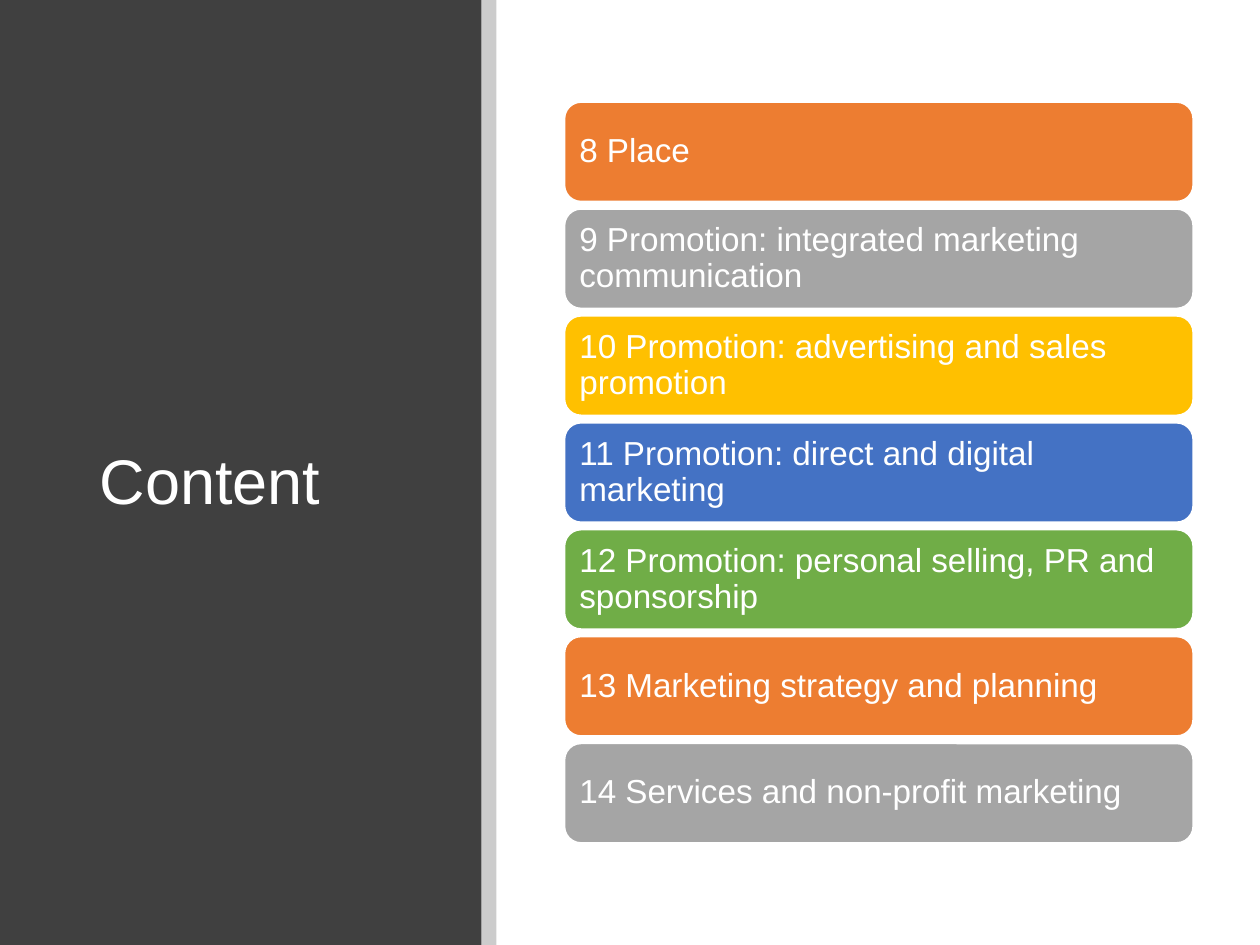
from dataclasses import dataclass

from lxml import etree
from pptx import Presentation
from pptx.dml.color import RGBColor
from pptx.enum.shapes import MSO_SHAPE
from pptx.enum.text import MSO_ANCHOR, PP_ALIGN
from pptx.oxml.ns import qn
from pptx.util import Inches, Pt

RECTANGLE, ROUNDED = MSO_SHAPE.RECTANGLE, MSO_SHAPE.ROUNDED_RECTANGLE
MIDDLE, LEFT = MSO_ANCHOR.MIDDLE, PP_ALIGN.LEFT

SLIDE_WIDTH, SLIDE_HEIGHT = 10, 7.5


@dataclass(frozen=True)
class Theme:
    font: str = "Arial"
    title_size: float = 36
    chapter_size: float = 19
    line_spacing: float = 0.9
    light: str = "FFFFFF"
    panel: str = "404040"
    strip: str = "000000"
    strip_opacity: float = 0.2
    orange: str = "ED7D31"
    gray: str = "A5A5A5"
    gold: str = "FFC000"
    blue: str = "4472C4"
    green: str = "70AD47"


@dataclass(frozen=True)
class Box:
    left: float
    top: float
    width: float
    height: float

    def emu(self) -> tuple:
        return tuple(Inches(v) for v in (self.left, self.top, self.width, self.height))


@dataclass(frozen=True)
class Chapter:
    number: int
    name: str
    color: str


THEME = Theme()
PANEL = Box(0, 0, 3.82, SLIDE_HEIGHT)
STRIP = Box(PANEL.width, 0, 0.12, SLIDE_HEIGHT)
TITLE = Box(0.69, 0.89, 2.74, 5.91)
FIRST_BAR = Box(4.48, 0.81, 4.99, 0.79)
LAST_BAR_TOP = 5.9
BAR_INSET = 0.08

CHAPTERS = [
    Chapter(8, "Place", THEME.orange),
    Chapter(9, "Promotion: integrated marketing communication", THEME.gray),
    Chapter(10, "Promotion: advertising and sales promotion", THEME.gold),
    Chapter(11, "Promotion: direct and digital marketing", THEME.blue),
    Chapter(12, "Promotion: personal selling, PR and sponsorship", THEME.green),
    Chapter(13, "Marketing strategy and planning", THEME.orange),
    Chapter(14, "Services and non-proﬁt marketing", THEME.gray),
]


def add_filled(shapes, kind, box: Box, color: str):
    shape = shapes.add_shape(kind, *box.emu())
    shape.shadow.inherit = False
    shape.fill.solid()
    shape.fill.fore_color.rgb = RGBColor.from_string(color)
    shape.line.fill.background()
    return shape


def set_opacity(shape, share: float) -> None:
    color = shape.element.spPr.find(qn("a:solidFill"))[0]
    etree.SubElement(color, qn("a:alpha")).set("val", str(round(share * 100000)))


def write(frame, text: str, size: float) -> None:
    frame.word_wrap = True
    frame.vertical_anchor = MIDDLE
    paragraph = frame.paragraphs[0]
    paragraph.alignment = LEFT
    paragraph.line_spacing = THEME.line_spacing
    run = paragraph.add_run()
    run.text = text
    run.font.name = THEME.font
    run.font.size = Pt(size)
    run.font.color.rgb = RGBColor.from_string(THEME.light)


def place_title(slide, text: str) -> None:
    """Fill the title placeholder and bring it in front of the panel."""
    title = slide.shapes.title
    title.left, title.top, title.width, title.height = TITLE.emu()
    write(title.text_frame, text, THEME.title_size)
    title.element.getparent().append(title.element)


def add_chapter(shapes, chapter: Chapter, box: Box) -> None:
    bar = add_filled(shapes, ROUNDED, box, chapter.color)
    bar.line.color.rgb = RGBColor.from_string(THEME.light)
    bar.line.width = Pt(1)
    frame = bar.text_frame
    frame.margin_left = frame.margin_right = Inches(BAR_INSET)
    frame.margin_top = frame.margin_bottom = Inches(BAR_INSET)
    write(frame, f"{chapter.number} {chapter.name}", THEME.chapter_size)


def main() -> None:
    deck = Presentation()
    deck.slide_width, deck.slide_height = Inches(SLIDE_WIDTH), Inches(SLIDE_HEIGHT)
    slide = deck.slides.add_slide(deck.slide_layouts.get_by_name("Title Only"))

    add_filled(slide.shapes, RECTANGLE, PANEL, THEME.panel)
    place_title(slide, "Content")
    strip = add_filled(slide.shapes, RECTANGLE, STRIP, THEME.strip)
    set_opacity(strip, THEME.strip_opacity)

    chapter_list = slide.shapes.add_group_shape()
    pitch = (LAST_BAR_TOP - FIRST_BAR.top) / (len(CHAPTERS) - 1)
    for row, chapter in enumerate(CHAPTERS):
        box = Box(FIRST_BAR.left, FIRST_BAR.top + row * pitch,
                  FIRST_BAR.width, FIRST_BAR.height)
        add_chapter(chapter_list.shapes, chapter, box)

    deck.save("out.pptx")


if __name__ == "__main__":
    main()
